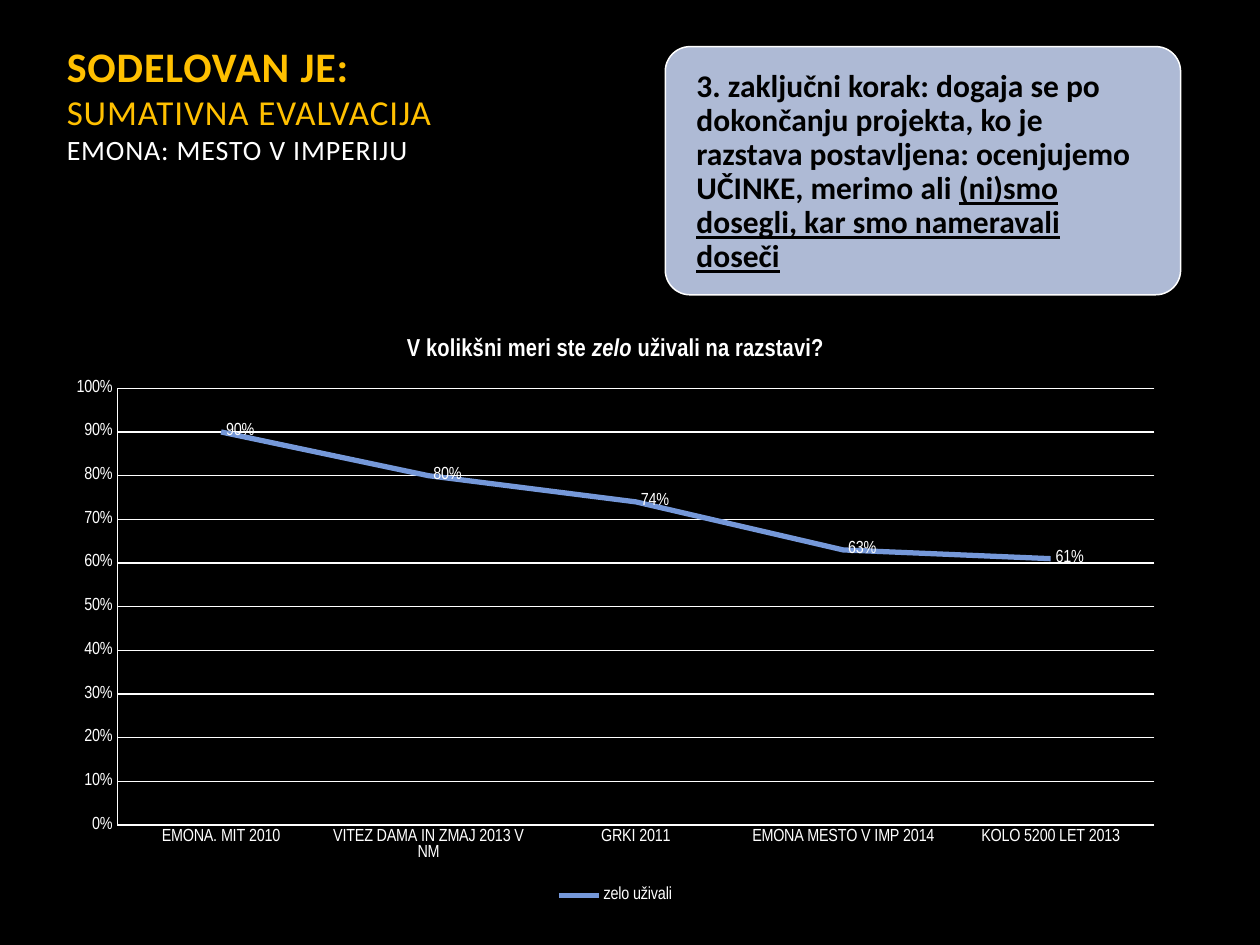
from dataclasses import dataclass

from pptx import Presentation
from pptx.chart.data import CategoryChartData
from pptx.dml.color import RGBColor
from pptx.enum.chart import XL_CHART_TYPE, XL_LABEL_POSITION, XL_LEGEND_POSITION, XL_TICK_MARK
from pptx.enum.shapes import MSO_SHAPE
from pptx.enum.text import MSO_ANCHOR, MSO_AUTO_SIZE, PP_ALIGN
from pptx.util import Inches, Pt

WHITE = "FFFFFF"
BLACK = "000000"
GOLD = "FFC000"
BLUE = "7598D9"
PALE_BLUE = "AEBAD5"
HEADING_FONT = "Calibri"
CHART_FONT = "Arial Narrow"


@dataclass
class TitleLine:
    text: str
    size: int
    color: str
    bold: bool = False


TITLE_LINES = [
    TitleLine("SODELOVAN JE:", 24, GOLD, True),
    TitleLine("SUMATIVNA EVALVACIJA", 20, GOLD),
    TitleLine("EMONA: MESTO V IMPERIJU", 16, WHITE),
]
ENJOYMENT = {
    "EMONA. MIT 2010": 0.9,
    "VITEZ DAMA IN ZMAJ 2013 V NM": 0.8,
    "GRKI 2011": 0.74,
    "EMONA MESTO V IMP 2014": 0.63,
    "KOLO 5200 LET 2013": 0.61,
}


def rgb(color: str) -> RGBColor:
    return RGBColor.from_string(color)


def set_font(font, name: str, size: int, color: str, bold: bool = False) -> None:
    font.name = name
    font.size = Pt(size)
    font.bold = bold
    font.color.rgb = rgb(color)


def set_line(line, color: str, width: float) -> None:
    line.color.rgb = rgb(color)
    line.width = Pt(width)


def add_title(s, lines: list[TitleLine]) -> None:
    sp = s.shapes.title
    sp.left, sp.top, sp.width, sp.height = map(Inches, (0.43, 0.27, 4.72, 1.1))
    tf = sp.text_frame
    tf.word_wrap = True
    tf.auto_size = MSO_AUTO_SIZE.NONE
    tf.vertical_anchor = MSO_ANCHOR.BOTTOM
    p = tf.paragraphs[0]
    p.alignment = PP_ALIGN.LEFT
    p.line_spacing = 1.0
    for i, line in enumerate(lines):
        if i:
            p.add_line_break()
        r = p.add_run()
        r.text = line.text
        set_font(r.font, HEADING_FONT, line.size, line.color, line.bold)
        r.font._element.set("spc", "50")


def add_step_box(s, text: str, underlined: str) -> None:
    sp = s.shapes.add_shape(
        MSO_SHAPE.ROUNDED_RECTANGLE, Inches(5.28), Inches(0.37), Inches(4.09), Inches(1.97)
    )
    sp.adjustments[0] = 0.1
    sp.shadow.inherit = False
    sp.fill.solid()
    sp.fill.fore_color.rgb = rgb(PALE_BLUE)
    set_line(sp.line, WHITE, 0.85)
    tf = sp.text_frame
    tf.word_wrap = True
    tf.vertical_anchor = MSO_ANCHOR.MIDDLE
    tf.margin_left, tf.margin_right = Inches(0.19), Inches(0.32)
    tf.margin_top, tf.margin_bottom = Inches(0.21), Inches(0.18)
    p = tf.paragraphs[0]
    p.alignment = PP_ALIGN.LEFT
    p.line_spacing = 0.9
    set_font(p.font, HEADING_FONT, 18, BLACK, True)
    p.add_run().text = text
    r = p.add_run()
    r.text = underlined
    r.font.underline = True


def add_enjoyment_chart(s, values: dict[str, float]) -> None:
    data = CategoryChartData(number_format="0%")
    data.categories = list(values)
    data.add_series("zelo uživali", list(values.values()))
    chart = s.shapes.add_chart(
        XL_CHART_TYPE.LINE, Inches(0.43), Inches(2.49), Inches(8.91), Inches(4.72), data
    ).chart
    set_font(chart.font, CHART_FONT, 10, WHITE)

    chart.has_title = True
    chart.chart_title.include_in_layout = False
    p = chart.chart_title.text_frame.paragraphs[0]
    set_font(p.font, CHART_FONT, 14, WHITE, True)
    for text, italic in (("V kolikšni meri ste ", False), ("zelo", True), (" uživali na razstavi?", False)):
        r = p.add_run()
        r.text = text
        set_font(r.font, CHART_FONT, 14, WHITE, True)
        r.font.italic = italic

    chart.has_legend = True
    chart.legend.position = XL_LEGEND_POSITION.BOTTOM
    chart.legend.include_in_layout = False

    for axis in (chart.category_axis, chart.value_axis):
        axis.major_tick_mark = XL_TICK_MARK.NONE
        axis.minor_tick_mark = XL_TICK_MARK.NONE
        set_line(axis.format.line, WHITE, 0.75)
    axis = chart.value_axis
    axis.minimum_scale, axis.maximum_scale, axis.major_unit = 0, 1, 0.1
    axis.has_major_gridlines = True
    set_line(axis.major_gridlines.format.line, WHITE, 0.75)
    axis.tick_labels.number_format = "0%"
    axis.tick_labels.number_format_is_linked = False

    plot = chart.plots[0]
    plot.vary_by_categories = False
    series = plot.series[0]
    series.smooth = False
    set_line(series.format.line, BLUE, 3)
    labels = series.data_labels
    labels.show_value = True
    labels.number_format = "0%"
    labels.number_format_is_linked = False
    labels.position = XL_LABEL_POSITION.RIGHT
    set_font(labels.font, CHART_FONT, 10, WHITE)


def main() -> None:
    prs = Presentation()
    prs.slide_width, prs.slide_height = Inches(10), Inches(7.5)
    s = prs.slides.add_slide(prs.slide_layouts[5])
    s.background.fill.solid()
    s.background.fill.fore_color.rgb = rgb(BLACK)
    add_title(s, TITLE_LINES)
    add_enjoyment_chart(s, ENJOYMENT)
    add_step_box(
        s,
        "3. zaključni korak: dogaja se po dokončanju projekta, ko je razstava "
        "postavljena: ocenjujemo UČINKE, merimo ali ",
        "(ni)smo dosegli, kar smo nameravali doseči",
    )
    prs.save("out.pptx")


if __name__ == "__main__":
    main()
